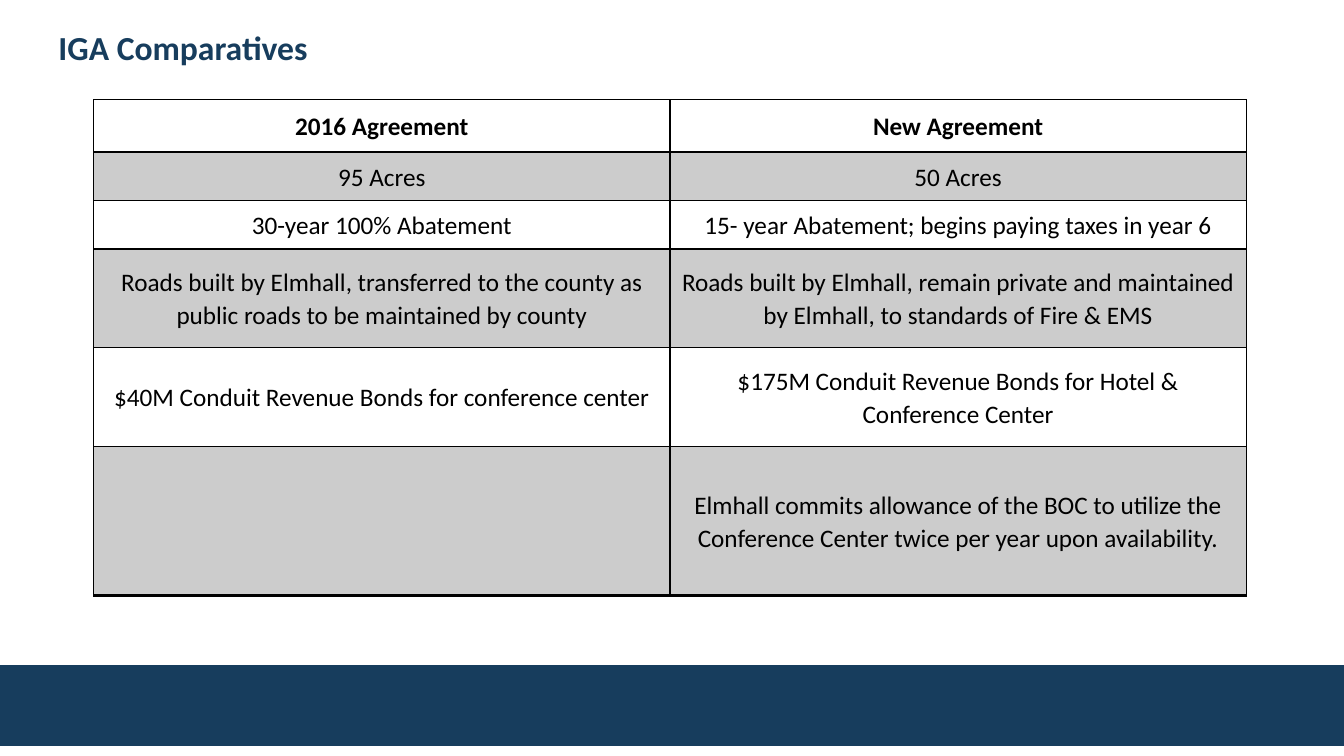
"""Build the IGA Comparatives slide with a two-column agreement table."""
from lxml.etree import SubElement
from pptx import Presentation
from pptx.dml.color import RGBColor
from pptx.enum.shapes import MSO_SHAPE
from pptx.enum.text import MSO_ANCHOR, PP_ALIGN
from pptx.oxml.ns import qn
from pptx.util import Inches, Pt

TITLE = "IGA Comparatives"
AGREEMENTS = [
    ("2016 Agreement", "New Agreement"),
    ("95 Acres", "50 Acres"),
    ("30-year 100% Abatement", "15- year Abatement; begins paying taxes in year 6"),
    (
        "Roads built by Elmhall, transferred to the county as public roads to be maintained by county",
        "Roads built by Elmhall, remain private and maintained by Elmhall, to standards of Fire & EMS",
    ),
    (
        "$40M Conduit Revenue Bonds for conference center",
        "$175M Conduit Revenue Bonds for Hotel & Conference Center",
    ),
    (
        "",
        "Elmhall commits allowance of the BOC to utilize the Conference Center twice per year upon availability.",
    ),
]
ROW_HEIGHTS = [0.52, 0.48, 0.48, 0.98, 0.98, 1.48]
TABLE_LEFT, TABLE_TOP, COLUMN_WIDTH = 0.93, 0.99, 5.715

NAVY = RGBColor(0x17, 0x3D, 0x5D)
BLACK = RGBColor(0, 0, 0)
GRAY = RGBColor(0xCC, 0xCC, 0xCC)
FONT = "Calibri"


def write_text(frame, text, size=18, color=BLACK, bold=False, align=PP_ALIGN.CENTER, spacing=1.0):
    """Put one formatted paragraph into a text frame."""
    paragraph = frame.paragraphs[0]
    paragraph.alignment = align
    paragraph.line_spacing = spacing
    paragraph.font.size = Pt(size)
    if text:
        run = paragraph.add_run()
        run.text = text
        run.font.name = FONT
        run.font.size = Pt(size)
        run.font.bold = bold
        run.font.color.rgb = color


def set_borders(cell, bottom_width):
    """Draw black lines on all four sides of a cell."""
    properties = cell._tc.get_or_add_tcPr()
    for side, width in (("L", 1), ("R", 1), ("T", 1), ("B", bottom_width)):
        line = SubElement(properties, qn(f"a:ln{side}"), w=str(Pt(width)))
        fill = SubElement(line, qn("a:solidFill"))
        SubElement(fill, qn("a:srgbClr"), val=str(BLACK))


def add_title(slide):
    """Place the slide title."""
    title = slide.shapes.title
    title.left, title.top = Inches(0.48), Inches(0.22)
    title.width, title.height = Inches(12.21), Inches(0.5)
    title.text_frame.vertical_anchor = MSO_ANCHOR.MIDDLE
    write_text(title.text_frame, TITLE, size=24, color=NAVY, bold=True, align=PP_ALIGN.LEFT)


def add_footer_band(slide):
    """Draw the band across the foot of the slide."""
    band = slide.shapes.add_shape(MSO_SHAPE.RECTANGLE, 0, Inches(6.6), Inches(13.33), Inches(0.8))
    band.shadow.inherit = False
    band.fill.solid()
    band.fill.fore_color.rgb = NAVY
    band.line.fill.background()


def add_agreement_table(slide):
    """Draw the table, shading every second row."""
    table = slide.shapes.add_table(
        len(AGREEMENTS), 2, Inches(TABLE_LEFT), Inches(TABLE_TOP),
        Inches(2 * COLUMN_WIDTH), Inches(sum(ROW_HEIGHTS)),
    ).table
    table.first_row = table.horz_banding = False
    for column in table.columns:
        column.width = Inches(COLUMN_WIDTH)
    last_row = len(AGREEMENTS) - 1
    for row_index, (texts, height) in enumerate(zip(AGREEMENTS, ROW_HEIGHTS)):
        table.rows[row_index].height = Inches(height)
        for column_index, text in enumerate(texts):
            cell = table.cell(row_index, column_index)
            cell.margin_left = cell.margin_right = Inches(0.07)
            cell.margin_top = cell.margin_bottom = 0
            cell.vertical_anchor = MSO_ANCHOR.MIDDLE
            set_borders(cell, 2 if row_index in (0, last_row) else 1)
            if row_index % 2:
                cell.fill.solid()
                cell.fill.fore_color.rgb = GRAY
            else:
                cell.fill.background()
            write_text(cell.text_frame, text, bold=row_index == 0, spacing=1.07)


def main():
    """Create and save the presentation."""
    presentation = Presentation()
    presentation.slide_width, presentation.slide_height = Inches(13.33), Inches(7.5)
    slide = presentation.slides.add_slide(presentation.slide_layouts[5])
    add_footer_band(slide)
    add_title(slide)
    add_agreement_table(slide)
    presentation.save("out.pptx")


if __name__ == "__main__":
    main()
